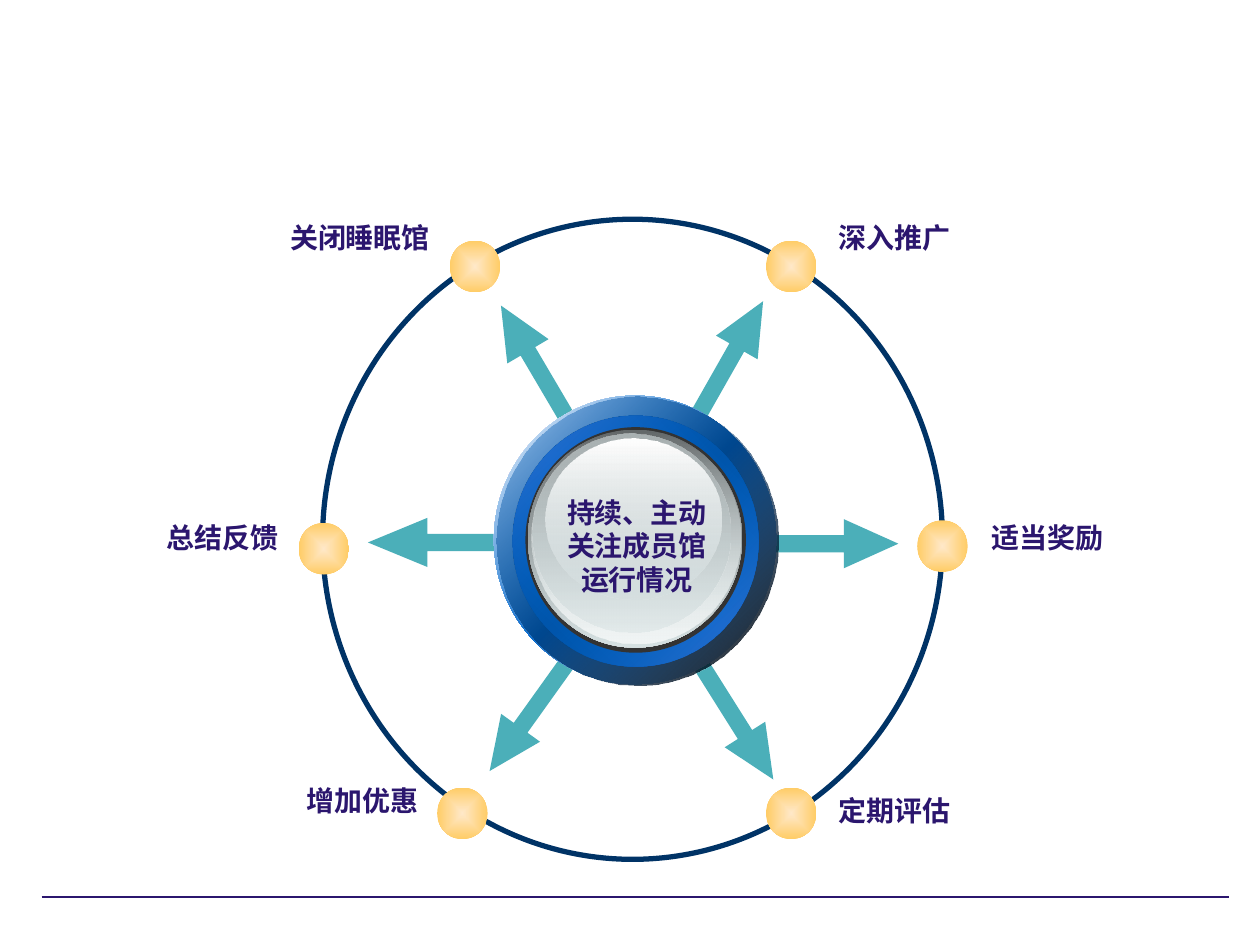
from pptx import Presentation
from pptx.dml.color import RGBColor
from pptx.enum.shapes import MSO_CONNECTOR as Connector, MSO_SHAPE as Preset
from pptx.enum.text import MSO_AUTO_SIZE as AutoSize, PP_ALIGN as Align
from pptx.oxml import parse_xml
from pptx.oxml.ns import nsdecls, qn
from pptx.util import Inches, Pt

COLUMNS, ROWS = 100, 75
RADIAL = ('<a:path path="shape"><a:fillToRect l="50000" t="50000" '
          'r="50000" b="50000"/></a:path>')
NODE_SIZE = (4, 4.1)
NODE_STOPS = [(0, "FFE8C8"), (100, "FFCC66")]

# label, label box, alignment, node corner, arrow box, arrow rotation
SPOKES = [
    ("深入推广", (65.6, 17, 13.3, 4.6), Align.LEFT, (60.8, 19.1), (52.5, 26.7, 10.8, 3.8), 299.6),
    ("适当奖励", (77.7, 40.8, 13.3, 4.6), Align.LEFT, (72.8, 41.3), (60.9, 41.2, 10.4, 3.9), 0),
    ("定期评估", (65.6, 62.5, 13.3, 4.6), Align.LEFT, (60.8, 62.5), (53.1, 55.4, 10.8, 3.8), 57.8),
    ("增加优惠", (20.9, 61.7, 13.3, 4.6), Align.RIGHT, (34.7, 62.5), (36.6, 54.9, 10.8, 3.8), 125.6),
    ("总结反馈", (9.8, 40.8, 13.3, 4.6), Align.RIGHT, (23.7, 41.5), (29.2, 41.1, 11.4, 3.9), 180),
    ("关闭睡眠馆", (19.1, 17, 16, 4.6), Align.RIGHT, (35.7, 19.1), (37.1, 27, 10.8, 3.8), 239.5),
]

# Hub discs from back to front: box, gradient stops (position, colour, opacity), angle
HUB_DISCS = [
    ((39.2, 31.4, 22.4, 22.9), [(0, "FFFFFF"), (50, "0066CC"), (100, "FFFFFF")], 45),
    ((39.4, 31.5, 22.4, 22.9), [(0, "0066CC", 32), (100, "000000", 90)], 45),
    ((40.7, 33, 19.5, 19.9), [(0, "004E9C"), (50, "0066CC"), (100, "004E9C")], 315),
    ((40.7, 33, 19.5, 19.9), [(0, "3C71CE"), (50, "0066CC", 0), (100, "3C71CE")], 45),
    ((41.7, 33.9, 17.5, 17.9), [(0, "333333"), (100, "333333")], 90),
    ((41.9, 34.1, 17, 17.3), [(0, "636869"), (100, "D6E1E2")], 90),
    ((42.2, 34.2, 16.6, 16.9), [(0, "D6E1E2", 0), (100, "F1F5F5")], 90),
    ((42.3, 34.4, 15.7, 15.8), [(0, "AAB2B3"), (100, "D6E1E2", 48)], 90),
    ((43.3, 34.8, 14, 12.8), [(0, "FFFFFF"), (100, "D6E1E2", 38)], 90),
]


def color(hex_value):
    return RGBColor.from_string(hex_value)


def gradient_xml(stops, direction):
    """Return a gradFill element; each stop is position, colour and optional opacity."""
    stop_xml = "".join(
        f'<a:gs pos="{position * 1000}"><a:srgbClr val="{hex_value}">'
        f'<a:alpha val="{(opacity or [100])[0] * 1000}"/></a:srgbClr></a:gs>'
        for position, hex_value, *opacity in stops)
    return parse_xml(f'<a:gradFill {nsdecls("a")} rotWithShape="1">'
                     f'<a:gsLst>{stop_xml}</a:gsLst>{direction}</a:gradFill>')


class Diagram:
    """Holds the shared style and the slide being drawn; boxes are in grid cells."""

    text_color = "2B166E"
    arrow_color = "4BAFB9"
    orbit_color = "003366"
    font_format = {"name": "Arial", "size": Pt(16), "bold": True}
    frame_format = {"word_wrap": False, "auto_size": AutoSize.SHAPE_TO_FIT_TEXT}

    def __init__(self, presentation):
        self.slide = presentation.slides.add_slide(presentation.slide_layouts[6])
        self.column = presentation.slide_width / COLUMNS
        self.row = presentation.slide_height / ROWS

    def place(self, box):
        units = (self.column, self.row) * (len(box) // 2)
        return [round(length * unit) for length, unit in zip(box, units)]

    def shape(self, preset, box):
        shape = self.slide.shapes.add_shape(preset, *self.place(box))
        shape.shadow.inherit = False
        shape.line.fill.background()
        return shape

    def rule(self, start, end):
        line = self.slide.shapes.add_connector(
            Connector.STRAIGHT, *self.place(start), *self.place(end))
        line.line.color.rgb = color(self.text_color)
        line.line.width = Pt(0.75)
        line._element.spPr.append(parse_xml(f'<a:effectLst {nsdecls("a")}/>'))

    def arrow(self, box, rotation):
        arrow = self.shape(Preset.RIGHT_ARROW, box)
        arrow.rotation = rotation
        arrow.adjustments[0] = 0.352
        arrow.adjustments[1] = 1.21 if rotation == 180 else 1.11
        arrow.fill.solid()
        arrow.fill.fore_color.rgb = color(self.arrow_color)

    def orbit(self, box):
        orbit = self.shape(Preset.OVAL, box)
        orbit.fill.background()
        orbit.line.color.rgb = color(self.orbit_color)
        orbit.line.width = Pt(3)

    def disc(self, box, stops, angle=None):
        """Draw a gradient disc, radial when no angle is given."""
        disc = self.shape(Preset.OVAL, box)
        if len({stop[1:] for stop in stops}) == 1:
            disc.fill.solid()
            disc.fill.fore_color.rgb = color(stops[0][1])
            return
        disc.fill.gradient()
        properties = disc._element.spPr
        direction = RADIAL if angle is None else f'<a:lin ang="{angle * 60000}" scaled="1"/>'
        properties.replace(properties.find(qn("a:gradFill")), gradient_xml(stops, direction))

    def text(self, box, lines, alignment):
        frame = self.slide.shapes.add_textbox(*self.place(box)).text_frame
        for name, value in self.frame_format.items():
            setattr(frame, name, value)
        frame.text = "\n".join(lines)
        for paragraph in frame.paragraphs:
            paragraph.alignment = alignment
            for name, value in self.font_format.items():
                setattr(paragraph.font, name, value)
            paragraph.font.color.rgb = color(self.text_color)


def main():
    presentation = Presentation()
    presentation.slide_width, presentation.slide_height = Inches(10), Inches(7.5)
    diagram = Diagram(presentation)

    diagram.rule((3.3, 71.2), (97.5, 71.2))
    for *_, arrow_box, rotation in SPOKES:
        diagram.arrow(arrow_box, rotation)
    diagram.orbit((25.6, 17.4, 49.2, 50.8))
    for label, label_box, alignment, node, *_ in SPOKES:
        diagram.text(label_box, [label], alignment)
        diagram.disc(node + NODE_SIZE, NODE_STOPS)
    for box, stops, angle in HUB_DISCS:
        diagram.disc(box, stops, angle)
    diagram.text((43.7, 38.8, 13.7, 9.1), ["持续、主动", "关注成员馆", "运行情况"], Align.CENTER)

    presentation.save("out.pptx")


if __name__ == "__main__":
    main()
